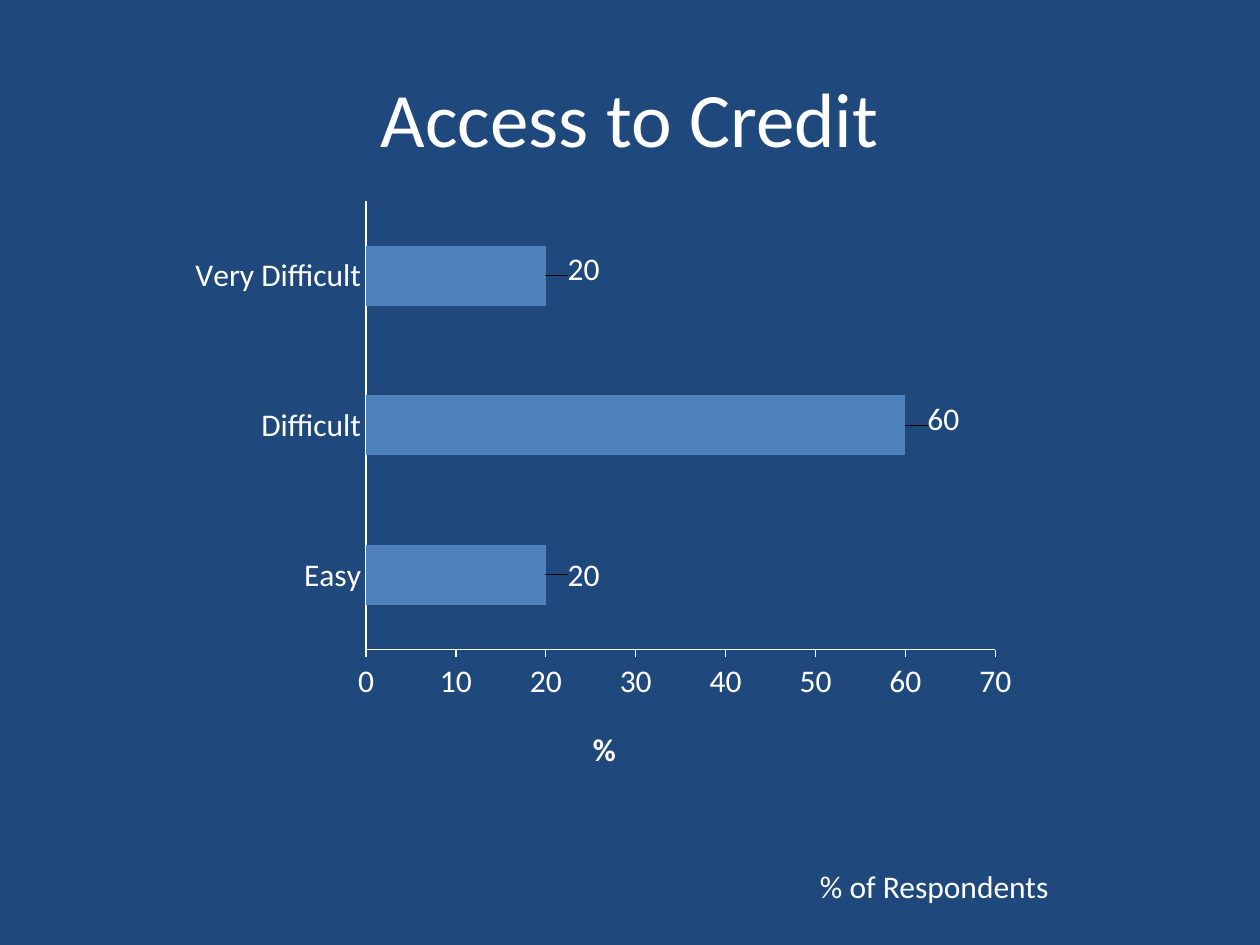
from dataclasses import dataclass
from typing import NamedTuple

from lxml.etree import SubElement
from pptx import Presentation
from pptx.chart.data import CategoryChartData
from pptx.dml.color import RGBColor
from pptx.enum.chart import XL_CHART_TYPE as ChartType
from pptx.enum.chart import XL_LABEL_POSITION as LabelPosition
from pptx.enum.chart import XL_TICK_MARK as TickMark
from pptx.enum.text import MSO_ANCHOR as Anchor
from pptx.enum.text import PP_ALIGN as Align
from pptx.oxml.ns import qn
from pptx.util import Inches, Pt


@dataclass(frozen=True)
class Theme:
    font: str = "Calibri"
    background: RGBColor = RGBColor(0x1F, 0x49, 0x7D)
    text: RGBColor = RGBColor(0xFF, 0xFF, 0xFF)
    bar: RGBColor = RGBColor(0x4F, 0x81, 0xBD)
    title_size: int = 44
    body_size: int = 18
    axis_width: float = 0.75


class Box(NamedTuple):
    left: float
    top: float
    width: float
    height: float

    def lengths(self) -> list:
        return [Inches(value) for value in self]


class Answer(NamedTuple):
    name: str
    percent: int
    label_shift: dict


THEME = Theme()
ANSWERS = [
    Answer("Easy", 20, {"x": 0.02, "y": 0}),
    Answer("Difficult", 60, {"x": 0.02, "y": -0.01}),
    Answer("Very Difficult", 20, {"x": 0.02, "y": -0.01}),
]


def style_font(font, size: int) -> None:
    font.name = THEME.font
    font.size = Pt(size)
    font.color.rgb = THEME.text


def write_text(shape, text: str, size: int) -> None:
    shape.text_frame.text = text
    paragraph = shape.text_frame.paragraphs[0]
    paragraph.alignment = Align.CENTER
    style_font(paragraph.font, size)


def set_layout(parent, after: str, settings: dict) -> None:
    """Give a chart element a manual layout, placed after the named child."""
    for existing in parent.findall(qn("c:layout")):
        parent.remove(existing)
    layout = SubElement(parent, qn("c:layout"))
    manual = SubElement(layout, qn("c:manualLayout"))
    for name, value in settings.items():
        SubElement(manual, qn(f"c:{name}")).set("val", str(value))
    previous = parent.find(qn(after)) if after else None
    if previous is None:
        parent.insert(0, layout)
    else:
        previous.addnext(layout)


def style_axis(axis, tick_mark) -> None:
    axis.has_major_gridlines = False
    axis.major_tick_mark = tick_mark
    axis.minor_tick_mark = TickMark.NONE
    axis.format.line.color.rgb = THEME.text
    axis.format.line.width = Pt(THEME.axis_width)
    style_font(axis.tick_labels.font, THEME.body_size)


def add_answer_chart(slide, box: Box) -> None:
    data = CategoryChartData()
    data.categories = [answer.name for answer in ANSWERS]
    data.add_series("Series 1", [answer.percent for answer in ANSWERS])
    chart = slide.shapes.add_chart(ChartType.BAR_CLUSTERED, *box.lengths(), data).chart
    chart.has_legend = False
    chart.has_title = False
    style_font(chart.font, THEME.body_size)

    style_axis(chart.category_axis, TickMark.NONE)
    value_axis = chart.value_axis
    style_axis(value_axis, TickMark.OUTSIDE)
    value_axis.minimum_scale, value_axis.maximum_scale = 0, 70
    value_axis.major_unit = 10
    axis_title = value_axis.axis_title
    axis_title.text_frame.text = "%"
    title_font = axis_title.text_frame.paragraphs[0].font
    style_font(title_font, THEME.body_size)
    title_font.bold = True

    plot = chart.plots[0]
    plot.gap_width = 150
    plot.vary_by_categories = False
    series = plot.series[0]
    series.format.fill.solid()
    series.format.fill.fore_color.rgb = THEME.bar
    labels = series.data_labels
    labels.show_value = True
    labels.position = LabelPosition.OUTSIDE_END
    style_font(labels.font, THEME.body_size)
    for index, answer in enumerate(ANSWERS):
        label = series.points[index].data_label
        style_font(label.font, THEME.body_size)
        label.position = LabelPosition.OUTSIDE_END
    label_elements = series.data_labels._element.findall(qn("c:dLbl"))
    for element, answer in zip(label_elements, ANSWERS):
        set_layout(element, "c:idx", answer.label_shift)

    edges = {"xMode": "edge", "yMode": "edge"}
    set_layout(axis_title._element, "c:tx", edges | {"x": 0.48, "y": 0.89})
    plot_area = chart._chartSpace.chart.plotArea
    inner = {"layoutTarget": "inner"} | edges
    set_layout(plot_area, "", inner | {"x": 0.22, "y": 0.02, "w": 0.74, "h": 0.75})


def main() -> None:
    presentation = Presentation()
    presentation.slide_width, presentation.slide_height = Inches(10), Inches(7.5)
    slide = presentation.slides.add_slide(presentation.slide_layouts[5])
    slide.background.fill.solid()
    slide.background.fill.fore_color.rgb = THEME.background

    title = slide.shapes.title
    title.left, title.top, title.width, title.height = Box(0.5, 0.3, 9, 1.25).lengths()
    title.text_frame.vertical_anchor = Anchor.MIDDLE
    write_text(title, "Access to Credit", THEME.title_size)

    caption = slide.shapes.add_textbox(*Box(5.08, 6.83, 4.67, 0.4).lengths())
    caption.text_frame.word_wrap = True
    write_text(caption, "% of Respondents", THEME.body_size)

    add_answer_chart(slide, Box(1.42, 1.5, 6.75, 4.75))
    presentation.save("out.pptx")


if __name__ == "__main__":
    main()
